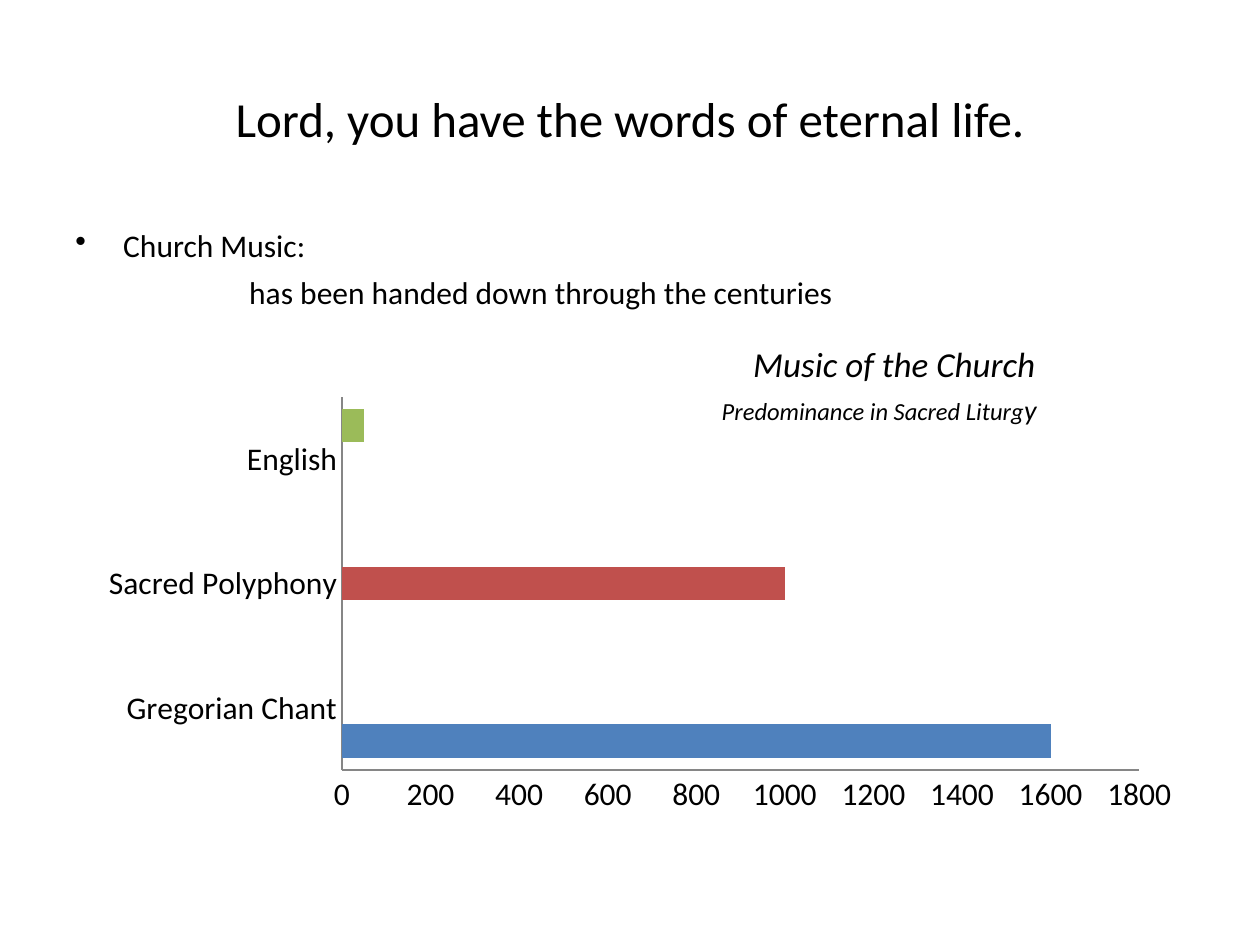
from lxml import etree
from pptx import Presentation, util as u
from pptx.chart.data import CategoryChartData
from pptx.dml.color import RGBColor
from pptx.enum import chart as ch, text
from pptx.oxml.ns import qn

WIDTH, HEIGHT = u.Inches(10), u.Inches(7.5)
FONT = "Calibri"
COLORS = {"ink": "000000", "axis": "868686", "chant": "4F81BD",
          "polyphony": "C0504D", "english": "9BBB59"}


def rgb(name):
    """Return the named colour."""
    return RGBColor.from_string(COLORS[name])


def share_box(left, top, width, height):
    """Turn shares of the slide into lengths."""
    return (int(WIDTH * left), int(HEIGHT * top),
            int(WIDTH * width), int(HEIGHT * height))


def style_font(font, size, italic=False):
    """Apply the slide's typeface and ink."""
    font.name, font.size, font.italic = FONT, u.Pt(size), italic
    font.color.rgb = rgb("ink")


def add_title(slide, box):
    """Place the centred heading."""
    frame = slide.shapes.add_textbox(*box).text_frame
    frame.word_wrap = True
    frame.vertical_anchor = text.MSO_ANCHOR.MIDDLE
    paragraph = frame.paragraphs[0]
    paragraph.text = "Lord, you have the words of eternal life."
    paragraph.alignment = text.PP_ALIGN.CENTER
    style_font(paragraph.font, 28)


def add_body(slide, box):
    """Place the bulleted statement and the two chart captions."""
    frame = slide.shapes.add_textbox(*box).text_frame
    frame.word_wrap = True
    lines = [
        ("Church Music:", 18, False, 0.38, 0),
        ("has been handed down through the centuries", 18, False, 1.38, 5),
        ("Music of the Church", 20, True, 5.38, 18),
        ("Predominance in Sacred Liturg", 14, True, 5.13, 4.5),
    ]
    for index, (words, size, italic, indent, space) in enumerate(lines):
        paragraph = frame.add_paragraph() if index else frame.paragraphs[0]
        paragraph.add_run().text = words
        paragraph.space_before = u.Pt(space)
        style_font(paragraph.font, size, italic)
        paragraph._p.get_or_add_pPr().set("marL", str(u.Inches(indent)))
    last_letter = paragraph.add_run()
    last_letter.text = "y"
    last_letter.font.size = u.Pt(16)
    properties = frame.paragraphs[0]._p.pPr
    properties.set("indent", str(-u.Inches(0.38)))
    bullet = etree.Element(qn("a:buChar"), char="•")
    properties.insert_element_before(bullet, "a:tabLst", "a:defRPr", "a:extLst")


def set_plot_layout(chart, left, top, width, height):
    """Fix the inner plot area as shares of the chart."""
    plot_area = chart._chartSpace.chart.plotArea
    for old in plot_area.findall(qn("c:layout")):
        plot_area.remove(old)
    layout = etree.Element(qn("c:layout"))
    manual = etree.SubElement(layout, qn("c:manualLayout"))
    settings = {"layoutTarget": "inner", "xMode": "edge", "yMode": "edge",
                "x": left, "y": top, "w": width, "h": height}
    for tag, value in settings.items():
        etree.SubElement(manual, qn(f"c:{tag}"), val=str(value))
    plot_area.insert(0, layout)


def add_music_chart(slide, box):
    """Place the bar chart of sacred music."""
    data = CategoryChartData()
    data.categories = ["Gregorian Chant", "Sacred Polyphony", "English"]
    values = [1600, 1000, 50]
    for row, value in enumerate(values):
        data.add_series(f"Series {row + 1}",
                        [value if row == column else None
                         for column in range(len(values))])
    chart = slide.shapes.add_chart(
        ch.XL_CHART_TYPE.BAR_CLUSTERED, *box, data).chart
    chart.has_legend = chart.has_title = False
    style_font(chart.font, 18)
    plot = chart.plots[0]
    plot.gap_width, plot.vary_by_categories = 75, False
    for series, color in zip(plot.series, ("chant", "polyphony", "english")):
        series.format.fill.solid()
        series.format.fill.fore_color.rgb = rgb(color)
    for axis in (chart.category_axis, chart.value_axis):
        axis.has_major_gridlines = False
        axis.major_tick_mark = axis.minor_tick_mark = ch.XL_TICK_MARK.NONE
        axis.format.line.color.rgb = rgb("axis")
        axis.format.line.width = u.Pt(0.75)
    scale = chart.value_axis
    scale.minimum_scale, scale.maximum_scale, scale.major_unit = 0, 1800, 200
    scale.tick_labels.number_format = "General"
    scale.tick_labels.number_format_is_linked = False
    set_plot_layout(chart, 0.26, 0.06, 0.69, 0.79)


def main():
    """Build and save the slide."""
    presentation = Presentation()
    presentation.slide_width, presentation.slide_height = WIDTH, HEIGHT
    slide = presentation.slides.add_slide(presentation.slide_layouts[6])
    add_title(slide, share_box(0.05, 0.04, 0.9, 0.17))
    add_body(slide, share_box(0.05, 0.233, 0.9, 0.66))
    add_music_chart(slide, share_box(0.033, 0.39, 0.917, 0.5))
    presentation.save("out.pptx")


if __name__ == "__main__":
    main()
